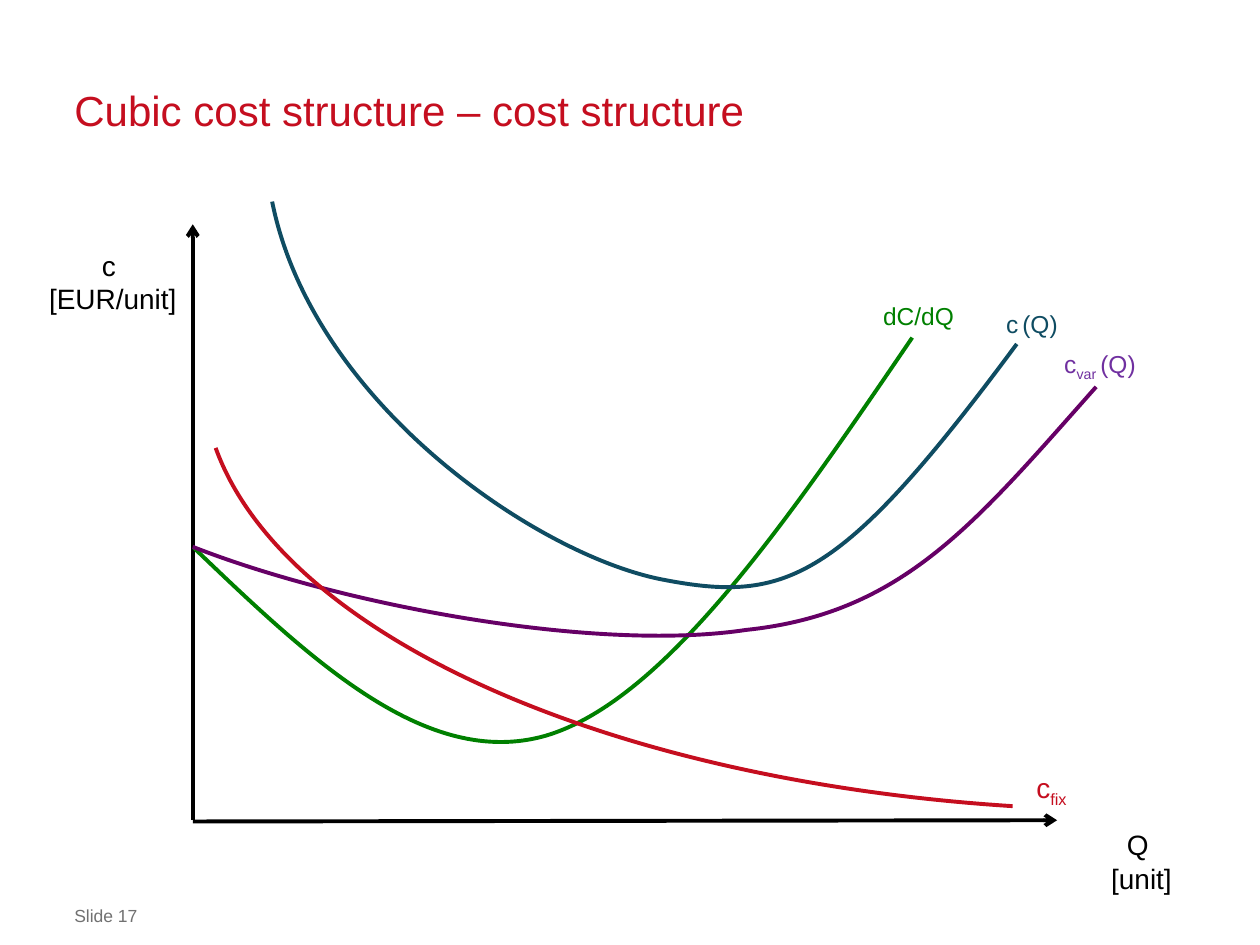
import pptx
import pptx.util
import pptx.dml.color
import pptx.enum.shapes
import pptx.enum.text
from lxml import etree
from pptx.util import Inches, Pt
from pptx.oxml.ns import qn

FONT = "Arial"
BLACK, RED, GREEN, BLUE = "000000", "C50E1F", "008000", "0F4C62"
PLUM, VIOLET, GREY = "660066", "7030A0", "717171"
WIDTH = 2.25

TITLE = "Cubic cost structure – cost structure"
FOOTER = "Slide 17"

# start, end
AXES = [
    ((1.53, 6.51), (1.53, 1.78)),
    ((1.53, 6.52), (8.39, 6.51)),
]

# colour, Bezier points: start, then two controls and an end per segment
CURVES = [
    (GREEN, [(1.54, 4.35), (2.46, 5.23), (3.38, 6.11), (4.33, 5.84),
             (5.28, 5.56), (6.26, 4.12), (7.24, 2.68)]),
    (BLUE, [(2.16, 1.6), (2.48, 3.2), (4.27, 4.41), (5.26, 4.6),
            (6.24, 4.79), (6.67, 4.62), (8.07, 2.73)]),
    (PLUM, [(1.53, 4.34), (2.7, 4.8), (4.72, 5.18), (5.92, 5),
            (7.17, 4.87), (7.74, 4.15), (8.7, 3.07)]),
]

# box, size, colour, lines of runs; a run starting with "_" is a subscript
LABELS = [
    ((0.15, 1.92, 1.49, 0.64), 16, BLACK, [["c "], ["[EUR/unit]"]]),
    ((8.31, 6.52, 1.5, 0.64), 16, BLACK, [["Q \v[unit]"]]),
    ((6.82, 2.34, 0.94, 0.34), 14, GREEN, [["dC/dQ"]]),
    ((8.14, 2.72, 1.18, 0.34), 14, VIOLET, [["c", "_var ", "(Q)"]]),
    ((7.68, 2.4, 1.02, 0.34), 14, BLUE, [["c", "_ ", "(Q)"]]),
    ((8.03, 6.07, 0.63, 0.37), 16, RED, [["c", "_fix"]]),
]


def rgb(code):
    return pptx.dml.color.RGBColor.from_string(code)


def style(font, size, color):
    font.name, font.size = FONT, Pt(size)
    font.color.rgb = rgb(color)


def stroke(shape, color):
    shape.line.color.rgb = rgb(color)
    shape.line.width = Pt(WIDTH)


def outline(shape, color):
    """Show a shape as a bare line."""
    shape.shadow.inherit = False
    shape.fill.background()
    stroke(shape, color)


def place(shape, box):
    shape.left, shape.top, shape.width, shape.height = map(Inches, box)


def trim(frame):
    frame.margin_left = frame.margin_right = 0
    frame.margin_top = frame.margin_bottom = 0
    frame.word_wrap = True


def add_title(slide):
    title = slide.shapes.title
    place(title, (0.59, 0.65, 8.82, 1.25))
    frame = title.text_frame
    frame.text = TITLE
    trim(frame)
    frame.auto_size = pptx.enum.text.MSO_AUTO_SIZE.NONE
    frame.vertical_anchor = pptx.enum.text.MSO_ANCHOR.TOP
    para = frame.paragraphs[0]
    para.alignment = pptx.enum.text.PP_ALIGN.LEFT
    para.line_spacing = Pt(30)
    style(para.runs[0].font, 24, RED)


def add_footer(slide):
    box = slide.shapes.add_textbox(*map(Inches, (0.59, 7.18, 7.24, 0.17)))
    box.text_frame.text = FOOTER
    trim(box.text_frame)
    style(box.text_frame.paragraphs[0].runs[0].font, 10, GREY)


def add_axis(slide, start, end):
    axis = slide.shapes.add_connector(
        pptx.enum.shapes.MSO_CONNECTOR.STRAIGHT, *map(Inches, start + end))
    stroke(axis, BLACK)
    etree.SubElement(axis.line._get_or_add_ln(), qn("a:tailEnd"), type="arrow")
    etree.SubElement(axis._element.spPr, qn("a:effectLst"))


def bend(shape):
    """Turn each three straight segments into one Bezier segment."""
    lines = list(shape._element.iter(qn("a:lnTo")))
    for first, *rest in zip(lines[::3], lines[1::3], lines[2::3]):
        first.tag = qn("a:cubicBezTo")
        for line in rest:
            first.append(line[0])
            line.getparent().remove(line)


def add_curve(slide, color, points):
    start, *dots = [tuple(map(Inches, point)) for point in points]
    pen = slide.shapes.build_freeform(*start)
    pen.add_line_segments(dots, close=False)
    curve = pen.convert_to_shape()
    bend(curve)
    outline(curve, color)


def add_label(slide, box, size, color, lines):
    frame = slide.shapes.add_textbox(*map(Inches, box)).text_frame
    frame.word_wrap = True
    frame.auto_size = pptx.enum.text.MSO_AUTO_SIZE.SHAPE_TO_FIT_TEXT
    for i, line in enumerate(lines):
        para = frame.add_paragraph() if i else frame.paragraphs[0]
        para.alignment = pptx.enum.text.PP_ALIGN.CENTER
        for part in line:
            for n, text in enumerate(part.split("\v")):
                if n:
                    para.add_line_break()
                run = para.add_run()
                run.text = text.lstrip("_")
                style(run.font, size, color)
                if text.startswith("_"):
                    run.font._element.set("baseline", "-25000")


def add_arc(slide):
    """Draw the falling fixed cost per unit."""
    arc = slide.shapes.add_shape(pptx.enum.shapes.MSO_SHAPE.ARC,
                                 *map(Inches, (1.61, -0.45, 14.88, 6.88)))
    arc.rotation = 180
    arc.adjustments[0], arc.adjustments[1] = 171.94, 213.36
    outline(arc, RED)


def main():
    deck = pptx.Presentation()
    deck.slide_width, deck.slide_height = Inches(10), Inches(7.5)
    slide = deck.slides.add_slide(deck.slide_layouts[5])
    add_title(slide)
    add_footer(slide)
    for axis in AXES:
        add_axis(slide, *axis)
    for curve in CURVES:
        add_curve(slide, *curve)
    for label in LABELS:
        add_label(slide, *label)
    add_arc(slide)
    deck.save("out.pptx")


if __name__ == "__main__":
    main()
